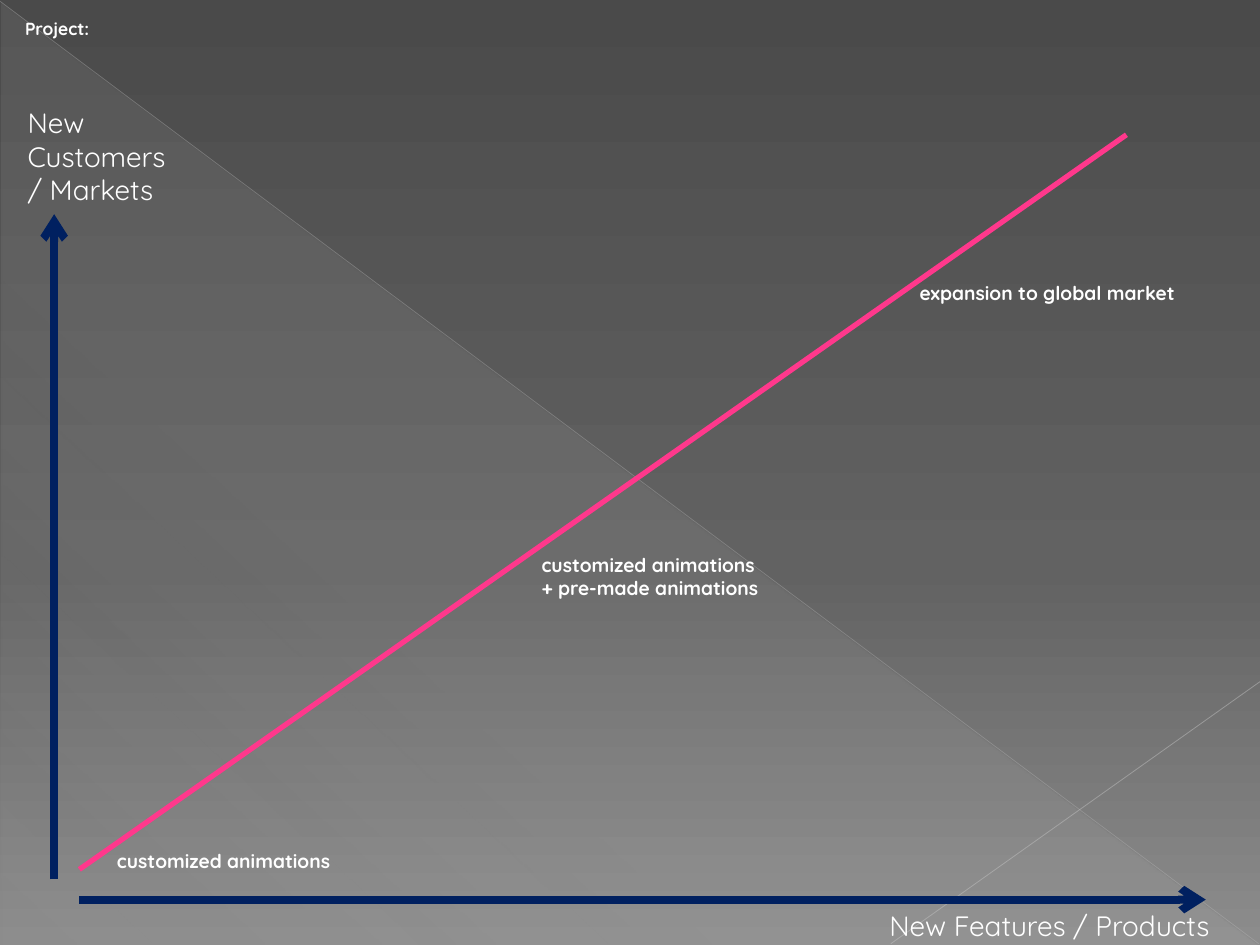
from dataclasses import dataclass

from lxml.etree import SubElement
from pptx import Presentation
from pptx.dml.color import RGBColor
from pptx.enum.shapes import MSO_CONNECTOR, MSO_SHAPE
from pptx.enum.text import MSO_AUTO_SIZE
from pptx.oxml.ns import qn
from pptx.slide import Slide
from pptx.util import Inches, Pt


@dataclass(frozen=True)
class Theme:
    font: str = "Quicksand"
    text: str = "FFFFFF"
    axis: str = "002060"
    growth: str = "FF388C"
    triangle: str = "D2D2D2"
    long_diagonal: str = "BFBFBF"
    short_diagonal: str = "C6C6C6"
    background: tuple = ((0, "4A4A4A", 100), (60, "626262", 100), (100, "8C8C8C", 100))
    axis_size: int = 16
    label_size: int = 11
    project_size: int = 10


@dataclass(frozen=True)
class Line:
    start: tuple[float, float]
    end: tuple[float, float]
    color: str
    width: float
    opacity: int = 100
    arrow: bool = False


@dataclass(frozen=True)
class Label:
    text: str
    left: float
    top: float
    width: float
    height: float
    size: int
    bold: bool = True
    wrap: bool = True


THEME = Theme()

DECOR_LINES = (
    Line((0, 0.01), (9.99, 7.49), THEME.long_diagonal, 0.39, 35),
    Line((10, 5.41), (7.07, 7.49), THEME.short_diagonal, 0.47, 45),
)
CHART_LINES = (
    Line((0.43, 6.98), (0.43, 1.7), THEME.axis, 4.5, arrow=True),
    Line((0.63, 7.14), (9.57, 7.14), THEME.axis, 4.5, arrow=True),
    Line((0.63, 6.9), (8.94, 1.07), THEME.growth, 3),
)
LABELS = (
    Label("New Customers / Markets", 0.12, 0.79, 1.42, 0.91, THEME.axis_size, bold=False),
    Label("New Features / Products", 6.96, 7.16, 3.08, 0.37, THEME.axis_size, bold=False),
    Label("Project:", 0.1, 0.09, 0.72, 0.27, THEME.project_size, wrap=False),
    Label("customized animations", 0.83, 6.69, 2.13, 0.29, THEME.label_size),
    Label("customized animations\n+ pre-made animations", 4.2, 4.34, 2.13, 0.47, THEME.label_size),
    Label("expansion to global market", 7.2, 2.18, 2.6, 0.29, THEME.label_size),
)


def set_opacity(color_element, percent: int) -> None:
    """Add an alpha value to a colour that is not fully opaque."""
    if percent < 100:
        SubElement(color_element, qn("a:alpha")).set("val", str(percent * 1000))


def set_gradient(fill, owner, stops: tuple, angle: int) -> None:
    """Fill the owner element with a linear gradient of any number of stops."""
    fill.gradient()
    gradient = next(owner.iter(qn("a:gradFill")))
    stop_list = gradient.find(qn("a:gsLst"))
    for old_stop in list(stop_list):
        stop_list.remove(old_stop)
    for position, color, opacity in stops:
        stop = SubElement(stop_list, qn("a:gs"), pos=str(position * 1000))
        set_opacity(SubElement(stop, qn("a:srgbClr"), val=color), opacity)
    gradient.find(qn("a:lin")).set("ang", str(angle * 60000))


def draw_backdrop(slide: Slide) -> None:
    """Draw the gradient background and its translucent triangle."""
    set_gradient(slide.background.fill, slide.element, THEME.background, 90)
    triangle = slide.shapes.add_shape(
        MSO_SHAPE.RIGHT_TRIANGLE, Inches(0.01), Inches(0.02), Inches(9.98), Inches(7.48)
    )
    triangle.shadow.inherit = False
    triangle.line.fill.background()
    stops = tuple((position, THEME.triangle, opacity) for position, opacity in ((0, 10), (70, 8), (100, 1)))
    set_gradient(triangle.fill, triangle.element, stops, 133)


def draw_line(slide: Slide, line: Line) -> None:
    """Draw a straight line, with an arrowhead at its end when asked."""
    ends = [Inches(value) for value in (*line.start, *line.end)]
    connector = slide.shapes.add_connector(MSO_CONNECTOR.STRAIGHT, *ends)
    connector.line.width = Pt(line.width)
    connector.line.color.rgb = RGBColor.from_string(line.color)
    properties = connector.element.spPr
    set_opacity(next(properties.iter(qn("a:srgbClr"))), line.opacity)
    if line.arrow:
        SubElement(properties.find(qn("a:ln")), qn("a:tailEnd"), type="arrow")
    SubElement(properties, qn("a:effectLst"))


def draw_label(slide: Slide, label: Label) -> None:
    """Draw a text box in the theme font."""
    box = [Inches(value) for value in (label.left, label.top, label.width, label.height)]
    text_frame = slide.shapes.add_textbox(*box).text_frame
    text_frame.word_wrap = label.wrap
    text_frame.auto_size = MSO_AUTO_SIZE.SHAPE_TO_FIT_TEXT
    text_frame.text = label.text
    for paragraph in text_frame.paragraphs:
        for run in paragraph.runs:
            run.font.name = THEME.font
            run.font.size = Pt(label.size)
            run.font.bold = label.bold
            run.font.color.rgb = RGBColor.from_string(THEME.text)


def main() -> None:
    """Build the growth slide and save it."""
    presentation = Presentation()
    presentation.slide_width = Inches(10)
    presentation.slide_height = Inches(7.5)
    slide = presentation.slides.add_slide(presentation.slide_layouts.get_by_name("Blank"))
    draw_backdrop(slide)
    for line in DECOR_LINES + CHART_LINES:
        draw_line(slide, line)
    for label in LABELS:
        draw_label(slide, label)
    presentation.save("out.pptx")


if __name__ == "__main__":
    main()
